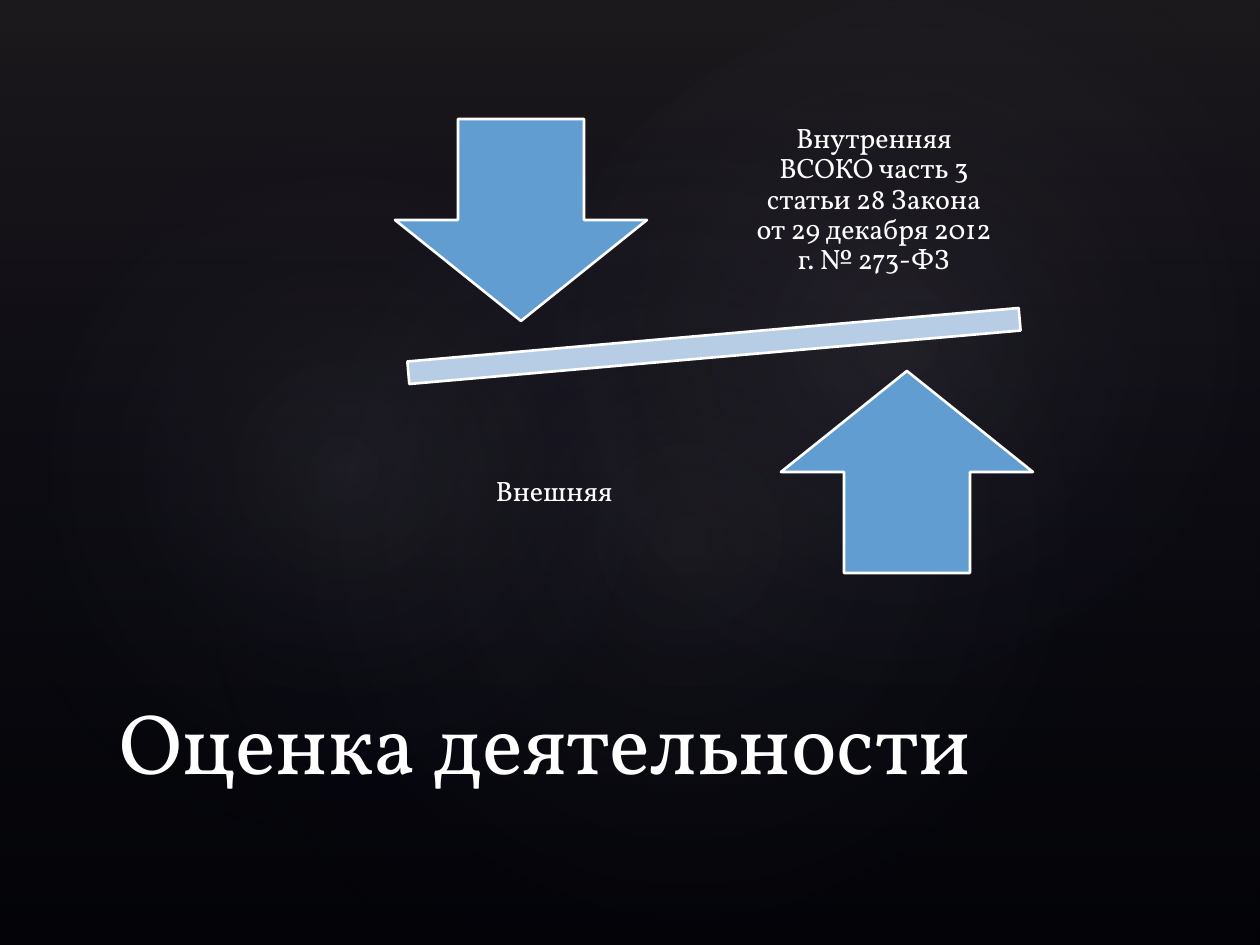
from lxml import etree
from pptx import Presentation
from pptx import util as u
from pptx.dml.color import RGBColor
from pptx.enum import shapes, text
from pptx.oxml import ns

PX = 914400 / 126
FONT = "Vollkorn"
BLACK = RGBColor(0, 0, 0)
WHITE = RGBColor(255, 255, 255)
BLUE = RGBColor(0x62, 0x9D, 0xD1)
PALE = RGBColor(0xB7, 0xCC, 0xE5)
MAUVE = RGBColor(0x50, 0x46, 0x52)
NAVY = RGBColor(0x24, 0x28, 0x52)
GLOW = RGBColor(0xC4, 0xBC, 0xC6)
KIND = shapes.MSO_SHAPE
ALIGN = text.PP_ALIGN
ANCHOR = text.MSO_ANCHOR

LINEAR = '<a:lin ang="5400000" scaled="0"/>'
RADIAL = ('<a:path path="circle"><a:fillToRect l="50000" t="50000" '
          'r="50000" b="50000"/></a:path>')


def emu(px):
    return u.Emu(round(px * PX))


def add_form(slide, kind, box, turn=0):
    form = slide.shapes.add_shape(kind, *map(emu, box))
    form.rotation = turn
    form.shadow.inherit = False
    form.line.fill.background()
    return form


def add_solid(slide, kind, box, color, turn=0):
    form = add_form(slide, kind, box, turn)
    form.fill.solid()
    form.fill.fore_color.rgb = color
    form.line.color.rgb = WHITE
    form.line.width = u.Pt(1.5)


def add_fade(slide, kind, box, stops, path, turn=0):
    """Add a see-through gradient; stops are (place, colour, opacity) in percent."""
    form = add_form(slide, kind, box, turn)
    marks = "".join(
        f'<a:gs pos="{pos * 1000}"><a:srgbClr val="{color}">'
        f'<a:alpha val="{alpha * 1000}"/></a:srgbClr></a:gs>'
        for pos, color, alpha in stops)
    fill = etree.fromstring(
        f'<a:gradFill {ns.nsdecls("a")} rotWithShape="1">'
        f'<a:gsLst>{marks}</a:gsLst>{path}</a:gradFill>')
    form._element.spPr.find(ns.qn("a:prstGeom")).addnext(fill)


def add_text(slide, box, words, size, anchor, align, pad=None, space=None):
    frame = slide.shapes.add_textbox(*map(emu, box)).text_frame
    frame.word_wrap = True
    frame.vertical_anchor = anchor
    if pad is not None:
        frame.margin_left = frame.margin_right = emu(pad)
        frame.margin_top = frame.margin_bottom = emu(pad)
    para = frame.paragraphs[0]
    para.alignment = align
    para.line_spacing = space
    run = para.add_run()
    run.text = words
    run.font.size = u.Pt(size)
    run.font.name = FONT
    run.font.color.rgb = WHITE


def draw_back(slide, box):
    fill = slide.background.fill
    fill.solid()
    fill.fore_color.rgb = BLACK
    add_fade(slide, KIND.RECTANGLE, box,
             [(0, MAUVE, 36), (100, NAVY, 10)], LINEAR)
    x, y = box[:2]
    for left, top, wide, high, turn, alpha in (
            (189, 144, 998, 786, 328.7, 7),
            (-38, 161, 764, 617, 294.3, 8),
            (451, 16, 893, 655, 328.7, 8)):
        add_fade(slide, KIND.OVAL, (x + left, y + top, wide, high),
                 [(0, GLOW, alpha), (58, NAVY, 0)], RADIAL, turn)


def draw_scale(slide, box):
    """Draw the tilted beam with an arrow and a label on each side."""
    x, y, wide, high = box
    beam_w, beam_h = 835, 96
    add_solid(slide, KIND.MATH_MINUS,
              (x + (wide - beam_w) / 2, y + (high - beam_h) / 2, beam_w, beam_h),
              PALE, 355)
    arrow_w, arrow_h = 252, 202
    label_w, label_h = 268, 212
    inset, out = 75, 25
    right, low = x + wide, y + high
    sides = (
        (KIND.DOWN_ARROW, x, y + out,
         right - inset - out - label_w + 75, y,
         "Внутренняя ВСОКО часть 3 статьи 28 Закона от 29 декабря 2012 г. № 273-ФЗ"),
        (KIND.UP_ARROW, right - arrow_w, low - out - arrow_h,
         x + out, low - label_h, "Внешняя"),
    )
    for kind, left, top, label_x, label_y, words in sides:
        add_solid(slide, kind, (left, top, arrow_w, arrow_h), BLUE)
        add_text(slide, (label_x, label_y, label_w, label_h), words, 16,
                 ANCHOR.MIDDLE, ALIGN.CENTER, 15, 0.9)


def draw_title(slide, box):
    add_text(slide, box, "Оценка деятельности", 49, ANCHOR.BOTTOM, ALIGN.LEFT)


def main():
    deck = Presentation()
    deck.slide_width, deck.slide_height = emu(1260), emu(945)
    slide = deck.slides.add_slide(deck.slide_layouts[6])
    draw_back(slide, (0, 0, 1260, 945))
    draw_scale(slide, (395, 94, 638, 504))
    draw_title(slide, (107, 672, 1040, 126))
    deck.save("out.pptx")


if __name__ == "__main__":
    main()
